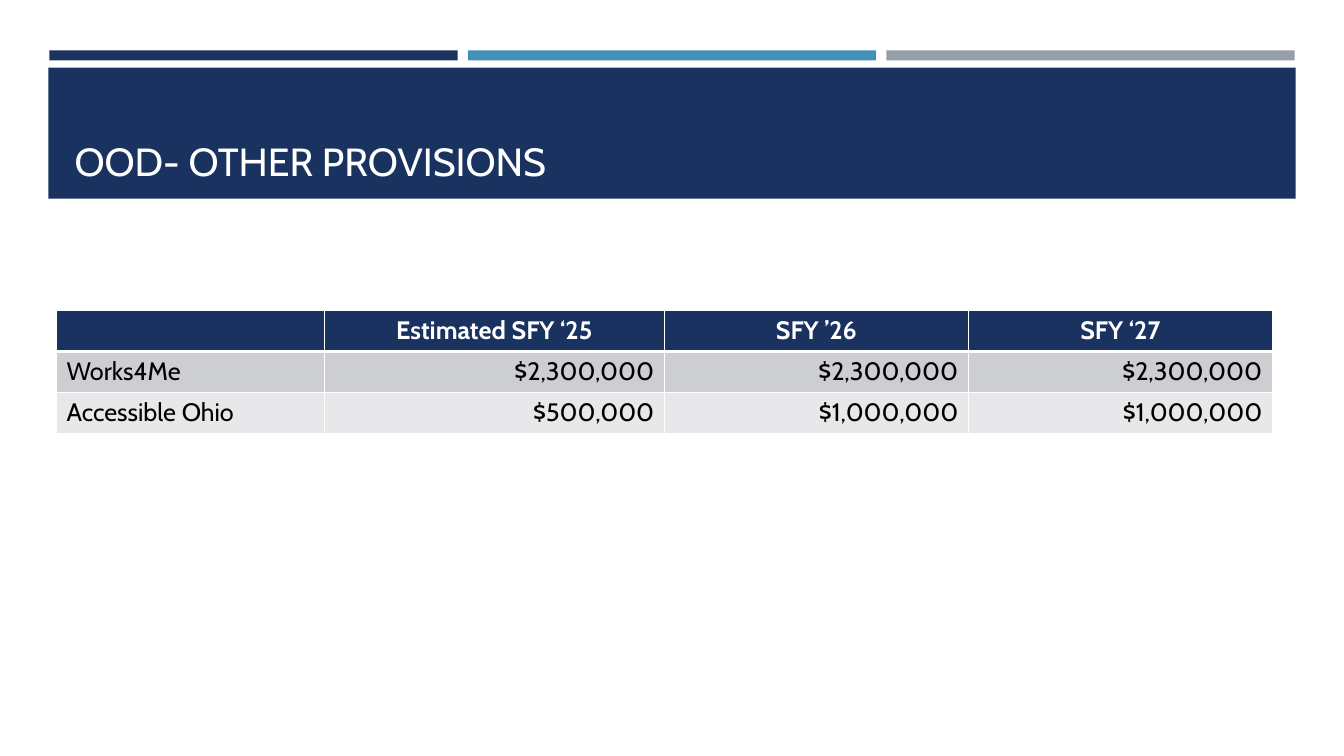
from dataclasses import dataclass

from lxml import etree
from pptx import Presentation
from pptx import util as u
from pptx.dml import color
from pptx.enum import shapes, text
from pptx.oxml import ns


@dataclass(frozen=True)
class Theme:
    font: str = "Cabin"
    navy: str = "1A3260"
    blue: str = "4590B8"
    gray: str = "969FA7"
    white: str = "FFFFFF"
    black: str = "000000"
    row_fills: tuple = ("CDCED2", "E8E8EA")
    title_size: int = 28
    table_size: int = 18
    thin_border: int = 1
    header_border: int = 3


THEME = Theme()
TITLE = "OOD- OTHER PROVISIONS"
COLUMN_WIDTHS = (2.66, 3.38, 3.02, 3.02)
ROWS = (
    ("", "Estimated SFY ‘25", "SFY ’26", "SFY ‘27"),
    ("Works4Me", "$2,300,000", "$2,300,000", "$2,300,000"),
    ("Accessible Ohio", "$500,000", "$1,000,000", "$1,000,000"),
)


def format_paragraph(paragraph, size, font_color, alignment, bold=False):
    paragraph.alignment = alignment
    for run in paragraph.runs:
        run.font.name = THEME.font
        run.font.size = u.Pt(size)
        run.font.bold = bold
        run.font.color.rgb = color.RGBColor.from_string(font_color)


def add_bar(slide, left, top, width, height, fill):
    bar = slide.shapes.add_shape(
        shapes.MSO_SHAPE.RECTANGLE, *map(u.Inches, (left, top, width, height)))
    bar.shadow.inherit = False
    bar.fill.solid()
    bar.fill.fore_color.rgb = color.RGBColor.from_string(fill)
    bar.line.fill.background()
    return bar


def add_accent_bars(slide, left, top, width, height, gap=0.1):
    fills = (THEME.navy, THEME.blue, THEME.gray)
    bar_width = (width - gap * (len(fills) - 1)) / len(fills)
    for index, fill in enumerate(fills):
        add_bar(slide, left + index * (bar_width + gap), top, bar_width, height, fill)


def add_title_band(slide, left, top, width, height):
    band = add_bar(slide, left, top, width, height, THEME.navy)
    title = slide.shapes.title
    band._element.addnext(title._element)
    title.left, title.top = u.Inches(left + 0.16), u.Inches(top + 0.1)
    title.width, title.height = u.Inches(width - 0.31), u.Inches(height - 0.19)
    title.text_frame.text = TITLE
    title.text_frame.vertical_anchor = text.MSO_ANCHOR.BOTTOM
    format_paragraph(title.text_frame.paragraphs[0], THEME.title_size,
                     THEME.white, text.PP_ALIGN.LEFT)


def set_borders(cell, top, bottom):
    properties = cell._tc.get_or_add_tcPr()
    widths = {"L": THEME.thin_border, "R": THEME.thin_border, "T": top, "B": bottom}
    for index, (side, width) in enumerate(widths.items()):
        line = etree.Element(ns.qn(f"a:ln{side}"), w=str(u.Pt(width)))
        fill = etree.SubElement(line, ns.qn("a:solidFill"))
        etree.SubElement(fill, ns.qn("a:srgbClr"), val=THEME.white)
        properties.insert(index, line)


def fill_cell(cell, value, row, column):
    header = row == 0
    fill = THEME.navy if header else THEME.row_fills[(row - 1) % 2]
    cell.fill.solid()
    cell.fill.fore_color.rgb = color.RGBColor.from_string(fill)
    set_borders(cell,
                THEME.header_border if row == 1 else THEME.thin_border,
                THEME.header_border if header else THEME.thin_border)
    if header:
        alignment = text.PP_ALIGN.CENTER
    else:
        alignment = text.PP_ALIGN.RIGHT if column else text.PP_ALIGN.LEFT
    cell.text_frame.text = value
    format_paragraph(cell.text_frame.paragraphs[0], THEME.table_size,
                     THEME.white if header else THEME.black, alignment, header)


def add_provisions_table(slide, left, top, width, height):
    frame = slide.shapes.add_table(
        len(ROWS), len(COLUMN_WIDTHS), *map(u.Inches, (left, top, width, height)))
    table = frame.table
    for column, column_width in zip(table.columns, COLUMN_WIDTHS):
        column.width = u.Inches(column_width * width / sum(COLUMN_WIDTHS))
    for row, values in enumerate(ROWS):
        for column, value in enumerate(values):
            fill_cell(table.cell(row, column), value, row, column)


def main():
    presentation = Presentation()
    presentation.slide_width = u.Inches(13.33)
    presentation.slide_height = u.Inches(7.5)
    slide = presentation.slides.add_slide(presentation.slide_layouts[5])
    add_accent_bars(slide, 0.49, 0.5, 12.35, 0.1)
    add_title_band(slide, 0.48, 0.67, 12.37, 1.3)
    add_provisions_table(slide, 0.56, 3.08, 12.06, 1.22)
    presentation.save("out.pptx")


if __name__ == "__main__":
    main()
